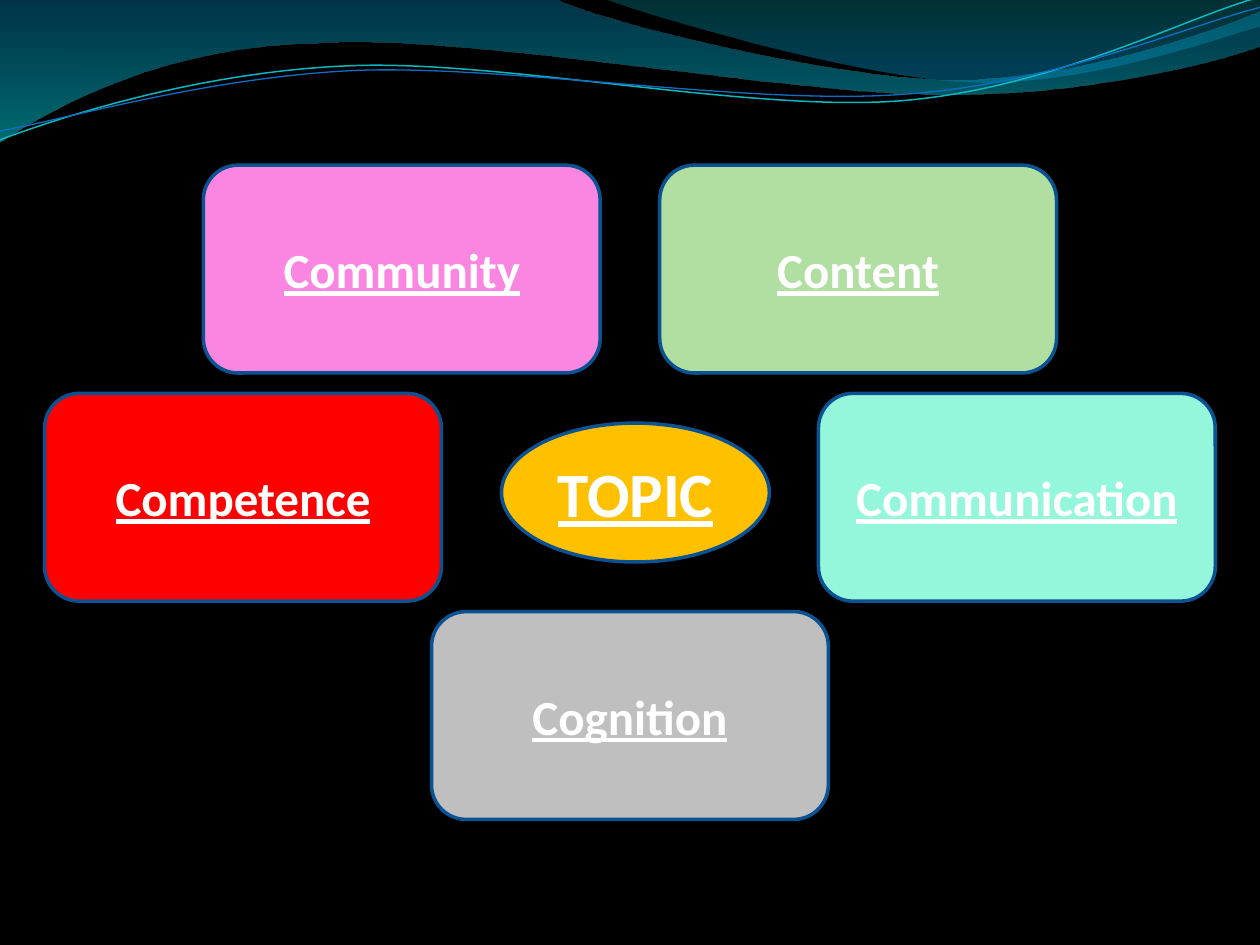
from lxml.etree import SubElement
from pptx import Presentation
from pptx.dml.color import RGBColor
from pptx.enum.shapes import MSO_SHAPE
from pptx.enum.text import MSO_ANCHOR, PP_ALIGN
from pptx.oxml.ns import qn
from pptx.util import Cm, Pt

SLIDE_W, SLIDE_H = 25.4, 19.05
CARD_W, CARD_H = 8, 4.19
STRAND_TILT = -2.7

# Outlines in cm: two numbers are a point, six are a Bezier segment
WAVE_WIDE = [
    (0, 0), (11.18, -0.03),
    (12.09, 0.43, 16.87, 1.6, 19.25, 1.6),
    (21.67, 1.6, 24.33, 0.66, 25.4, 0.23),
    (25.43, 0.91),
    (24.97, 1.12, 22.1, 1.93, 18.95, 1.9),
    (15.8, 1.9, 9.7, 0.71, 6.53, 0.86),
    (3.28, 0.91, 1.17, 2.11, -0.03, 2.87),
]
WAVE_RIGHT = [
    (12.17, -0.03),
    (12.93, 0.28, 17.32, 1.57, 19.53, 1.65),
    (21.74, 1.75, 24.41, 0.81, 25.4, 0.53),
    (25.4, 0),
]
STRAND_TEAL = [
    (-0.05, 2.22),
    (1.19, 1.82, 4.02, 1.04, 7.05, 1.06),
    (10.05, 1.07, 15.02, 2.37, 18.08, 2.29),
    (21.13, 2.2, 23.87, 0.91, 25.41, 0.55),
]
STRAND_BLUE = [
    (-0.04, 2.04),
    (1.16, 1.9, 4.18, 1.15, 7.2, 1.16),
    (10.25, 1.19, 15.13, 2.25, 18.19, 2.16),
    (21.21, 2.1, 23.93, 1.06, 25.45, 0.75),
]

# Text, fill, centre offset from the middle of the slide, top
CARDS = [
    ("Community", "FA86E1", -4.6, 3.33),
    ("Content", "B0DFA1", 4.6, 3.33),
    ("Competence", "FF0000", -7.8, 7.93),
    ("Cognition", "BFBFBF", 0, 12.33),
    ("Communication", "94F7DC", 7.8, 7.93),
]


def rgb(value):
    return RGBColor.from_string(value)


def add_outline(shapes, outline, close):
    """Build a freeform, then join each curve's three points into a Bezier."""
    points = [(Cm(x), Cm(y)) for seg in outline
              for x, y in zip(seg[::2], seg[1::2])]
    builder = shapes.build_freeform(*points[0])
    builder.add_line_segments(points[1:], close=close)
    sp = builder.convert_to_shape()
    sp.shadow.inherit = False
    lines = iter(list(sp._element.iter(qn("a:lnTo"))))
    for seg in outline[1:]:
        line = next(lines)
        if len(seg) == 6:
            line.addprevious(curve := line.makeelement(qn("a:cubicBezTo")))
            for part in (line, next(lines), next(lines)):
                curve.append(part[0])
                part.getparent().remove(part)
    return sp


def add_wave(shapes, outline, stops):
    """Add a filled wave; stops are (position, colour, opacity in percent)."""
    sp = add_outline(shapes, outline, True)
    sp.line.fill.background()
    sp.fill.gradient()
    sp.fill.gradient_angle = 270
    for stop, (position, color, _) in zip(sp.fill.gradient_stops, stops):
        stop.position = position
        stop.color.rgb = rgb(color)
    colors = sp._element.spPr.iter(qn("a:srgbClr"))
    for clr, (_, _, opacity) in zip(colors, stops):
        SubElement(clr, qn("a:alpha"), val=str(opacity * 1000))


def add_strand(shapes, outline, color, width):
    sp = add_outline(shapes, outline, False)
    sp.rotation = STRAND_TILT
    sp.fill.background()
    sp.line.color.rgb = rgb(color)
    sp.line.width = Pt(width)


def add_label(shapes, kind, box, text, fill, size):
    sp = shapes.add_shape(kind, *(Cm(v) for v in box))
    sp.shadow.inherit = False
    sp.fill.solid()
    sp.fill.fore_color.rgb = rgb(fill)
    sp.line.color.rgb = rgb("0B5292")
    sp.line.width = Pt(2)
    tf = sp.text_frame
    tf.text = text
    tf.vertical_anchor = MSO_ANCHOR.MIDDLE
    p = tf.paragraphs[0]
    p.alignment = PP_ALIGN.CENTER
    font = p.runs[0].font
    font.name = "Calibri"
    font.size = Pt(size)
    font.bold = font.underline = True
    font.color.rgb = rgb("FFFFFF")


def main():
    prs = Presentation()
    prs.slide_width, prs.slide_height = Cm(SLIDE_W), Cm(SLIDE_H)
    slide = prs.slides.add_slide(prs.slide_layouts[6])
    slide.background.fill.solid()
    slide.background.fill.fore_color.rgb = rgb("000000")
    shapes = slide.shapes

    add_wave(shapes, WAVE_WIDE, [(0, "0074A1", 45), (1, "00C6CF", 55)])
    add_wave(shapes, WAVE_RIGHT, [(0, "00A1A9", 30), (0.8, "008BBF", 45)])
    strands = shapes.add_group_shape().shapes
    add_strand(strands, STRAND_TEAL, "0AB8BF", 0.85)
    add_strand(strands, STRAND_BLUE, "0F6FC6", 0.75)

    for text, fill, offset, top in CARDS:
        left = (SLIDE_W - CARD_W) / 2 + offset
        add_label(shapes, MSO_SHAPE.ROUNDED_RECTANGLE,
                  (left, top, CARD_W, CARD_H), text, fill, 28)
    add_label(shapes, MSO_SHAPE.OVAL, (10.11, 8.53, 5.4, 2.8), "TOPIC", "FFC000", 36)

    prs.save("out.pptx")


if __name__ == "__main__":
    main()
